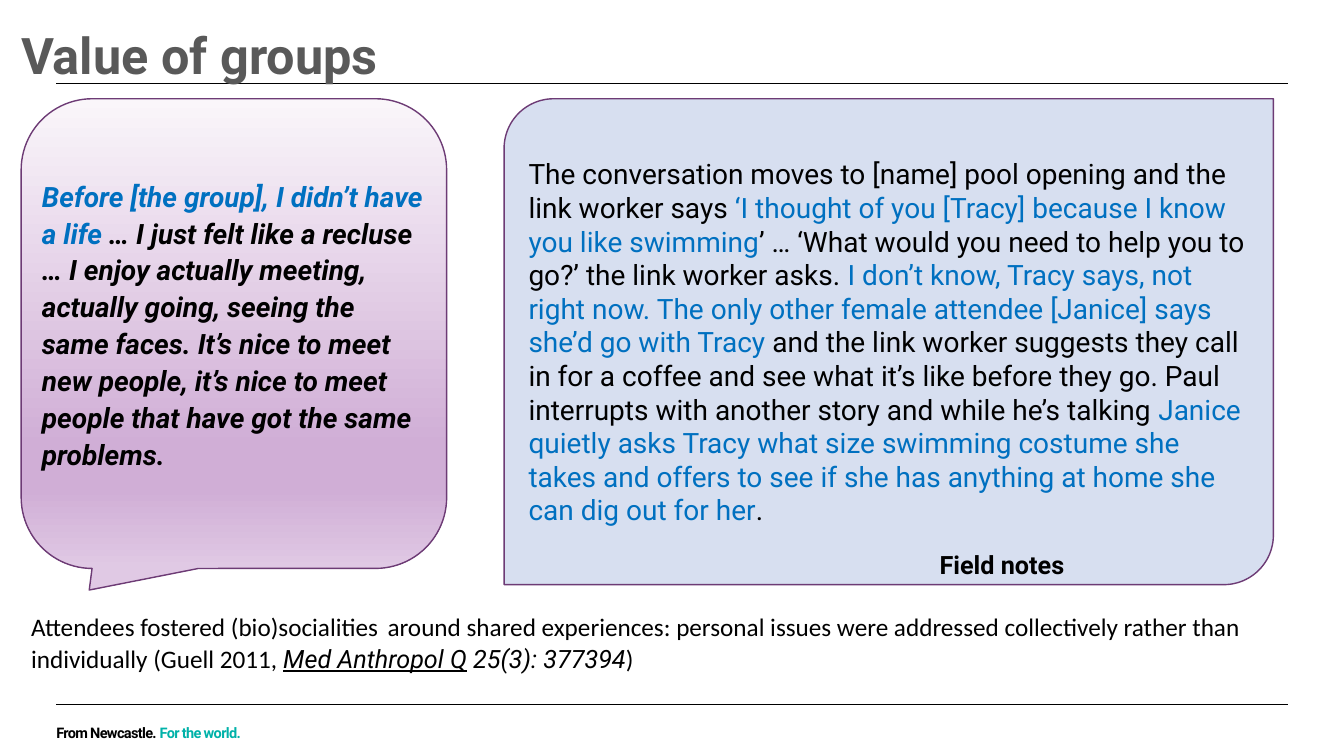
from lxml import etree
from pptx import Presentation
from pptx.dml.color import RGBColor
from pptx.enum import shapes, text
from pptx.oxml import ns
from pptx.util import Inches, Pt

COLOURS = {
    "black": "000000", "title": "595959", "blue": "0070C0", "teal": "00B2A9",
    "outline": "6D3B75", "notes": "D7DFF0",
}
QUOTE_STOPS = [(0, "FAF6FA"), (74, "D0AED6"), (83, "D0AED6"), (100, "E0C9E4")]
LEFT = 0.21
PANEL_TOP = 0.98
RULE_SPAN = (0.56, 12.77)


def rgb(name):
    return RGBColor.from_string(COLOURS[name])


def add_span(para, words, size=18, colour="black", font="Roboto", bold=False,
             italic=False, underline=False, baseline=None, spacing=None):
    span = para.add_run()
    span.text = words
    span.font.name = font
    span.font.size = Pt(size)
    span.font.bold = bold
    span.font.italic = italic
    span.font.underline = underline
    span.font.color.rgb = rgb(colour)
    properties = span._r.get_or_add_rPr()
    if baseline is not None:
        properties.set("baseline", str(baseline * 1000))
    if spacing is not None:
        properties.set("spc", str(int(spacing * 100)))


def fill_frame(shape, spans, line_spacing=None, anchor=text.MSO_ANCHOR.TOP,
               wrap=True, insets=None, **shared):
    """Write one left-aligned paragraph from (words, format) pairs."""
    frame = shape.text_frame
    frame.word_wrap = wrap
    frame.vertical_anchor = anchor
    if insets:
        (frame.margin_left, frame.margin_top,
         frame.margin_right, frame.margin_bottom) = map(Inches, insets)
    para = frame.paragraphs[0]
    para.alignment = text.PP_ALIGN.LEFT
    if line_spacing:
        para.line_spacing = line_spacing
    for words, style in spans:
        add_span(para, words, **{**shared, **style})


def add_text(page, box, spans, **style):
    shape = page.shapes.add_textbox(*map(Inches, box))
    fill_frame(shape, spans, **style)


def add_rule(page, top):
    start, end = map(Inches, RULE_SPAN)
    rule = page.shapes.add_connector(
        shapes.MSO_CONNECTOR.STRAIGHT, start, Inches(top), end, Inches(top))
    rule.line.color.rgb = rgb("black")
    rule.line.width = Pt(1)
    etree.SubElement(rule._element.spPr, ns.qn("a:effectLst"))


def add_panel(page, kind, box, adjustments):
    panel = page.shapes.add_shape(kind, *map(Inches, box))
    panel.shadow.inherit = False
    panel.line.color.rgb = rgb("outline")
    panel.line.width = Pt(1)
    for index, value in enumerate(adjustments):
        panel.adjustments[index] = value
    return panel


def set_gradient(shape, stops):
    """Fill a shape from top to bottom with (percent, colour) stops."""
    shape.fill.gradient()
    shape.fill.gradient_angle = 270
    stop_list = shape._element.spPr.find(".//" + ns.qn("a:gsLst"))
    for stop in list(stop_list):
        stop_list.remove(stop)
    for percent, colour in stops:
        stop = etree.SubElement(stop_list, ns.qn("a:gs"), pos=str(percent * 1000))
        etree.SubElement(stop, ns.qn("a:srgbClr"), val=colour)


def add_header(page, box):
    left, top, width, height = box
    add_rule(page, top + height)
    add_text(page, box, [("Value of groups", {})], size=36, bold=True,
             colour="title", insets=(0, 0, 0, 0))


def add_quote(page, box):
    callout = add_panel(page, shapes.MSO_SHAPE.ROUNDED_RECTANGULAR_CALLOUT,
                        box, (-0.34, 0.546, 0.167))
    set_gradient(callout, QUOTE_STOPS)
    fill_frame(callout, [
        ("Before [the group], I didn’t have a life ", {"colour": "blue"}),
        ("… I just felt like a recluse … I enjoy actually meeting, actually going, "
         "seeing the same faces. It’s nice to meet new people, it’s nice to meet "
         "people that have got the same problems.", {}),
    ], size=20, bold=True, italic=True, line_spacing=1.1,
        anchor=text.MSO_ANCHOR.MIDDLE, insets=(0, 0, 0, 0.2))


def add_field_notes(page, box):
    left, top, width, height = box
    panel = add_panel(page, shapes.MSO_SHAPE.ROUND_2_DIAG_RECTANGLE, box, (0.102, 0))
    panel.fill.solid()
    panel.fill.fore_color.rgb = rgb("notes")
    blue = {"colour": "blue"}
    fill_frame(panel, [
        ("The conversation moves to [name] pool opening and the link worker says", {}),
        (" ‘I thought of you [Tracy] because I know you like swimming", blue),
        ("’ … ‘What would you need to help you to go?’ the link worker asks. ", {}),
        ("I don’t know, Tracy says, not right now. The only other female attendee "
         "[Janice] says she’d go with Tracy ", blue),
        ("and the link worker suggests they call in for a coffee and see what it’s "
         "like before they go. Paul interrupts with another story and while he’s "
         "talking ", {}),
        ("Janice quietly asks Tracy what size swimming costume she takes and offers "
         "to see if she has anything at home she can dig out for her", blue),
        (".", {}),
    ], size=20, anchor=text.MSO_ANCHOR.MIDDLE)
    add_text(page, (left + 4.22, top + height - 0.4, 2.05, 0.4),
             [("Field notes", {})], bold=True)


def add_conclusion(page, box):
    journal = {"font": "Roboto", "italic": True}
    add_text(page, box, [
        ("Attendees fostered (bio)socialities", {}),
        (" ", {"size": 11}),
        (" around shared experiences: personal issues were addressed collectively "
         "rather than individually (Guell 2011, ", {}),
        ("Med Anthropol Q", {**journal, "underline": True}),
        (" 25(3): 377394", journal),
        (")", {}),
    ], font="Calibri", line_spacing=1.07)


def add_footer(page, box):
    left, top, width, height = box
    add_rule(page, top - 0.11)
    add_text(page, box, [("From Newcastle. ", {}),
                         ("For the world.", {"colour": "teal"})],
             bold=True, baseline=30, spacing=-0.5, wrap=False)


def main():
    deck = Presentation()
    deck.slide_width = Inches(13.33)
    deck.slide_height = Inches(7.5)
    page = deck.slides.add_slide(deck.slide_layouts[6])
    add_header(page, (LEFT, 0.24, 12.42, 0.59))
    add_field_notes(page, (5, PANEL_TOP, 7.63, 4.82))
    add_quote(page, (LEFT, PANEL_TOP, 4.22, 4.66))
    add_conclusion(page, (LEFT, 5.99, 13.12, 0.75))
    add_footer(page, (0.46, 7.1, 2.68, 0.3))
    deck.save("out.pptx")


if __name__ == "__main__":
    main()
